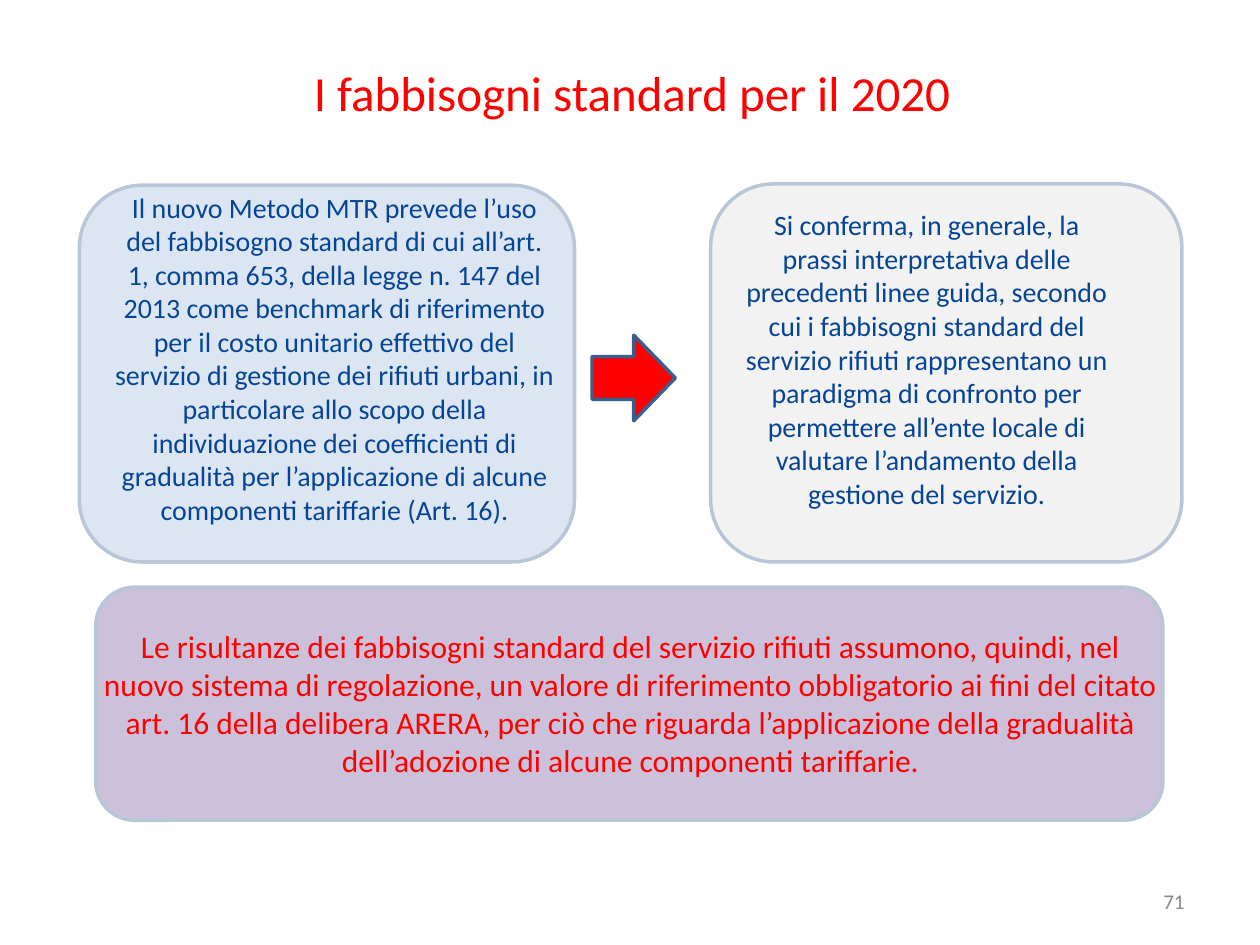
from pptx import Presentation
from pptx.dml.color import RGBColor
from pptx.enum.shapes import MSO_SHAPE
from pptx.enum.text import MSO_ANCHOR, PP_ALIGN
from pptx.util import Inches, Pt

RED = RGBColor(0xFF, 0x00, 0x00)
BLUE = RGBColor(0x06, 0x44, 0x96)
GREY = RGBColor(0x89, 0x89, 0x89)
LILAC = RGBColor(0xCC, 0xC1, 0xDA)
PALE_BLUE = RGBColor(0xDC, 0xE6, 0xF2)
PALE_GREY = RGBColor(0xF2, 0xF2, 0xF2)
BORDER = RGBColor(0xB9, 0xC6, 0xD8)
ARROW_BORDER = RGBColor(0x3A, 0x5F, 0x8C)

METHOD = (
    "Il nuovo Metodo MTR prevede l’uso del fabbisogno standard di cui all’art. 1, "
    "comma 653, della legge n. 147 del 2013 come benchmark di riferimento per il costo "
    "unitario effettivo del servizio di gestione dei rifiuti urbani, in particolare allo "
    "scopo della individuazione dei coefficienti di gradualità per l’applicazione di "
    "alcune componenti tariffarie (Art. 16)."
)
PRACTICE = (
    "Si conferma, in generale, la prassi interpretativa delle precedenti linee guida, "
    "secondo cui i fabbisogni standard del servizio rifiuti rappresentano un paradigma di "
    "confronto per permettere all’ente locale di valutare l’andamento della gestione del "
    "servizio."
)
RESULT = (
    "Le risultanze dei fabbisogni standard del servizio rifiuti assumono, quindi, nel "
    "nuovo sistema di regolazione, un valore di riferimento obbligatorio ai fini del "
    "citato art. 16 della delibera ARERA, per ciò che riguarda l’applicazione della "
    "gradualità dell’adozione di alcune componenti tariffarie."
)

prs = Presentation()
prs.slide_width, prs.slide_height = Inches(10), Inches(7.5)
s = prs.slides.add_slide(prs.slide_layouts[5])


def write(sp, text, size, color, align=PP_ALIGN.CENTER, anchor=MSO_ANCHOR.TOP):
    tf = sp.text_frame
    tf.text = text
    tf.word_wrap = True
    tf.vertical_anchor = anchor
    p = tf.paragraphs[0]
    p.alignment = align
    font = p.runs[0].font
    font.name, font.size, font.color.rgb = "Calibri", Pt(size), color


title = s.shapes.title
title.left, title.top = Inches(0.5), Inches(0.21)
title.width, title.height = Inches(9.03), Inches(1.04)
write(title, "I fabbisogni standard per il 2020", 28, RED, anchor=MSO_ANCHOR.MIDDLE)

panels = [
    (MSO_SHAPE.ROUNDED_RECTANGLE, (0.76, 4.66, 8.47, 1.85), LILAC, BORDER),
    (MSO_SHAPE.ROUNDED_RECTANGLE, (5.64, 1.46, 3.74, 3), PALE_GREY, BORDER),
    (MSO_SHAPE.ROUNDED_RECTANGLE, (0.63, 1.47, 3.93, 2.99), PALE_BLUE, BORDER),
    (MSO_SHAPE.RIGHT_ARROW, (4.7, 2.66, 0.66, 0.68), RED, ARROW_BORDER),
]
for kind, box, fill, border in panels:
    sp = s.shapes.add_shape(kind, *map(Inches, box))
    sp.shadow.inherit = False
    sp.fill.solid()
    sp.fill.fore_color.rgb = fill
    sp.line.color.rgb = border
    sp.line.width = Pt(2)

texts = [
    ((0.8, 1.46, 3.71, 3.06), METHOD, 16, BLUE),
    ((5.78, 1.6, 3.15, 2.79), PRACTICE, 16, BLUE),
    ((0.7, 4.93, 8.61, 1.31), RESULT, 18, RED),
    ((7.17, 6.95, 2.33, 0.4), "71", 12, GREY, PP_ALIGN.RIGHT, MSO_ANCHOR.MIDDLE),
]
for box, *content in texts:
    write(s.shapes.add_textbox(*map(Inches, box)), *content)

prs.save("out.pptx")
